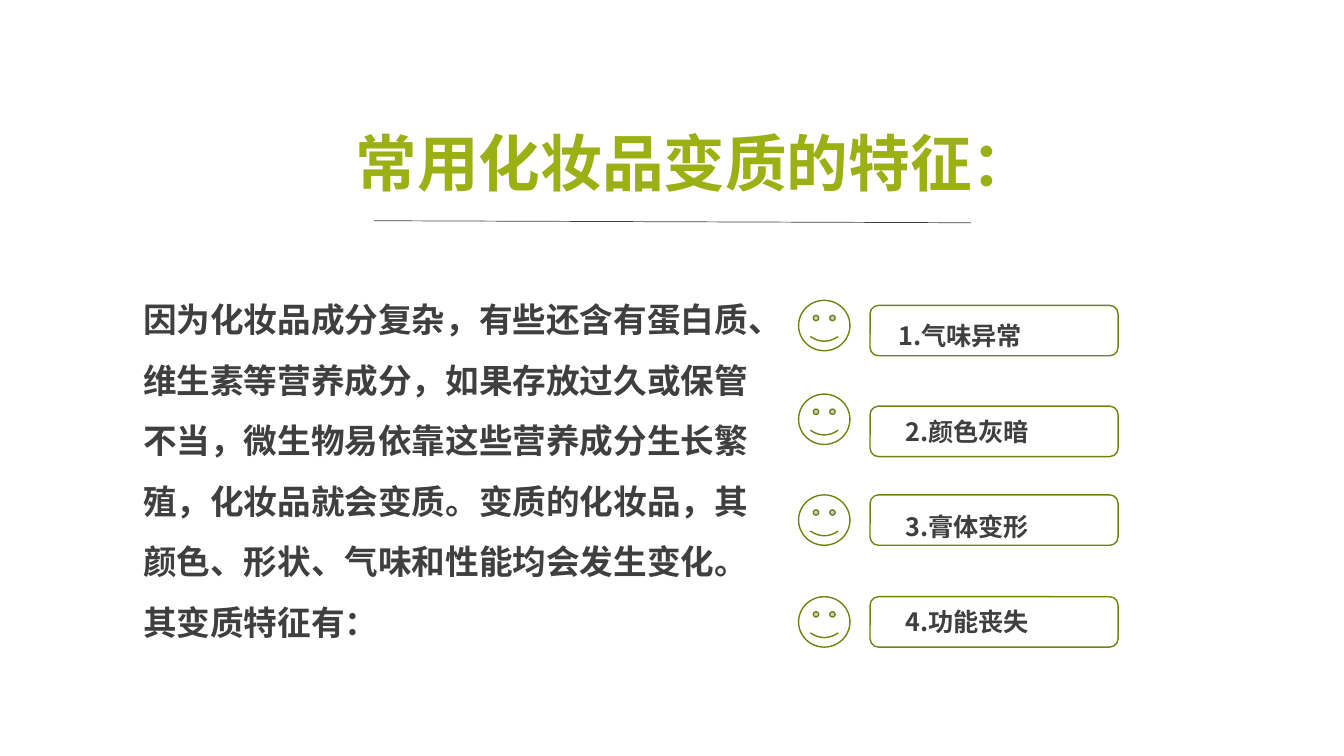
from lxml import etree
from pptx import Presentation
from pptx import util as u
from pptx.dml.color import RGBColor
from pptx.enum import shapes, text
from pptx.oxml import ns

FONT = "Noto Sans CJK SC"
DARK, GREEN, OLIVE, WHITE = "3F3F3F", "9BB014", "73820F", "FFFFFF"
TITLE = "常用化妆品变质的特征："
BODY = (
    "因为化妆品成分复杂，有些还含有蛋白质、维生素等营养成分，"
    "如果存放过久或保管不当，微生物易依靠这些营养成分生长繁殖，"
    "化妆品就会变质。变质的化妆品，其颜色、形状、气味和性能均会发生变化。"
    "其变质特征有："
)
SIGNS = [
    ("1.气味异常", 298, 303, (881, 298, 218, 55), 1.5),
    ("2.颜色灰暗", 391, 403, (888, 408, 211, 40), 1.0),
    ("3.膏体变形", 491, 491, (888, 502, 197, 40), 1.0),
    ("4.功能丧失", 592, 592, (888, 597, 197, 40), 1.0),
]


def px(n):
    return u.Emu(n * 9144)


def color(value):
    return RGBColor.from_string(value)


def add_text(s, box, content, size, ink, spacing=1.0, anchor=text.MSO_ANCHOR.TOP):
    tf = s.shapes.add_textbox(*map(px, box)).text_frame
    tf.word_wrap = True
    tf.vertical_anchor = anchor
    tf.text = content
    p = tf.paragraphs[0]
    p.line_spacing = spacing
    r = p.runs[0]
    r.font.size = u.Pt(size)
    r.font.bold = True
    r.font.color.rgb = color(ink)
    r.font.name = FONT
    ea = etree.SubElement(r.font._element, ns.qn("a:ea"))
    ea.set("typeface", FONT)


def add_outline(s, kind, box):
    sp = s.shapes.add_shape(kind, *map(px, box))
    sp.shadow.inherit = False
    sp.fill.solid()
    sp.fill.fore_color.rgb = color(WHITE)
    sp.line.color.rgb = color(OLIVE)
    sp.line.width = u.Pt(1)


def add_rule(s, ends):
    line = s.shapes.add_connector(shapes.MSO_CONNECTOR.STRAIGHT, *map(px, ends))
    line.line.color.rgb = color(DARK)
    line.line.width = u.Pt(0.5)
    etree.SubElement(line._element.spPr, ns.qn("a:effectLst"))


def main():
    prs = Presentation()
    prs.slide_width, prs.slide_height = px(1333), px(750)
    s = prs.slides.add_slide(prs.slide_layouts[6])
    add_rule(s, (371, 219, 963, 221))
    add_text(s, (343, 65, 651, 154), TITLE, 44, GREEN, 1.5, text.MSO_ANCHOR.MIDDLE)
    add_text(s, (132, 272, 628, 370), BODY, 24, DARK, 1.5)
    for label, face_top, frame_top, label_box, spacing in SIGNS:
        add_outline(s, shapes.MSO_SHAPE.SMILEY_FACE, (792, face_top, 51, 50))
        add_outline(s, shapes.MSO_SHAPE.ROUNDED_RECTANGLE, (863, frame_top, 246, 50))
        add_text(s, label_box, label, 18, DARK, spacing)
    prs.save("out.pptx")


if __name__ == "__main__":
    main()
